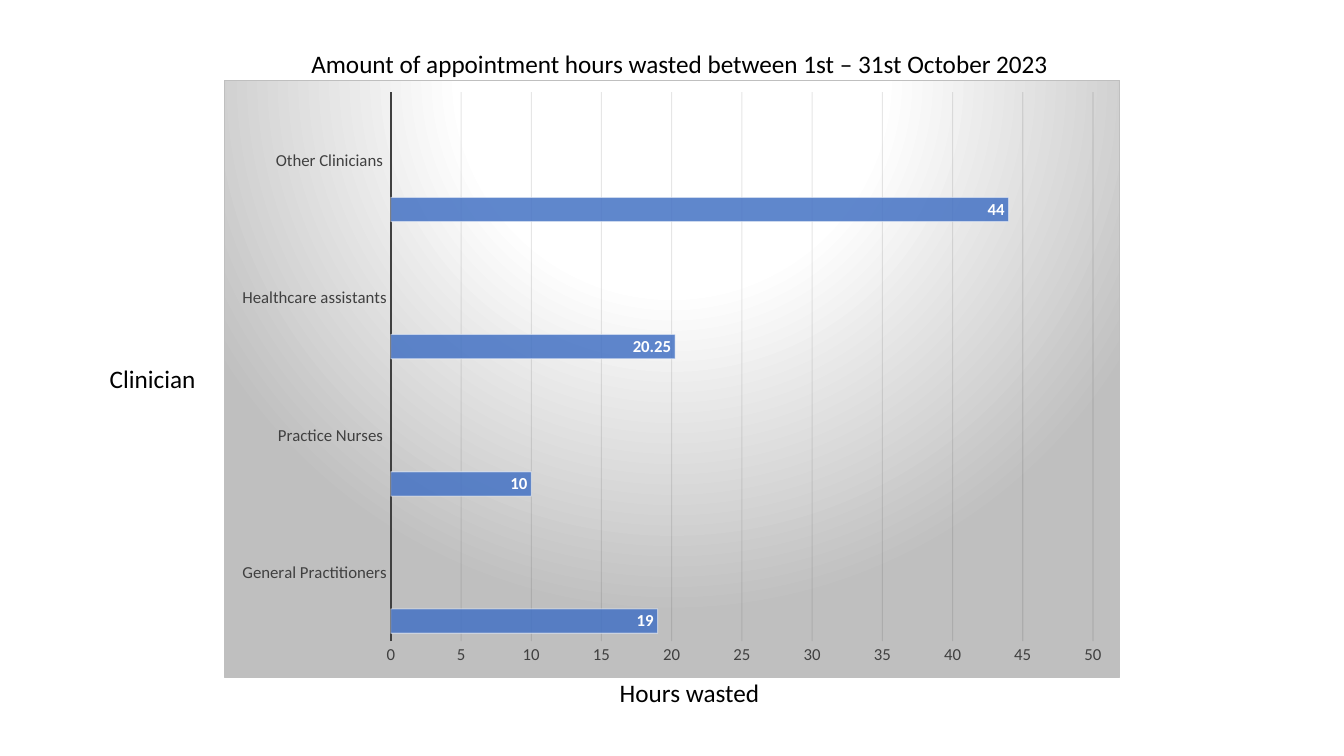
from dataclasses import dataclass

from lxml import etree
from pptx import Presentation
from pptx import util as u
from pptx.chart.chart import Chart
from pptx.chart.data import CategoryChartData
from pptx.dml import color
from pptx.dml.fill import FillFormat
from pptx.dml.line import LineFormat
from pptx.enum import chart as chart_enum
from pptx.enum import text
from pptx.oxml import parse_xml
from pptx.oxml.ns import nsdecls, qn
from pptx.slide import Slide

CELL = u.Inches(13.333) / 96  # the slide is a grid of 96 columns and 54 rows
FONT = "Calibri"
CATEGORIES = ["General Practitioners", "Practice Nurses ",
              "Healthcare assistants", "Other Clinicians "]
HOURS_WASTED = [19, 10, 20.25, 44]
SERIES_COLOURS = ["4472C4", "ED7D31", "A5A5A5", "FFC000", "5B9BD5"]


@dataclass
class Area:
    column: float
    row: float
    columns: float
    rows: float

    def box(self) -> list[u.Emu]:
        return [u.Emu(round(cells * CELL))
                for cells in (self.column, self.row, self.columns, self.rows)]


@dataclass
class Caption:
    wording: str
    area: Area


CHART_AREA = Area(16, 5.7, 64, 42.7)
CAPTIONS = [
    Caption("Amount of appointment hours wasted between 1st – 31st October 2023",
            Area(21.53, 3.1, 58.47, 7.27)),
    Caption("Hours wasted", Area(43.56, 48.02, 12.82, 2.9)),
    Caption("Clinician", Area(7.13, 25.56, 9.58, 2.9)),
]


def rgb(value: str) -> color.RGBColor:
    return color.RGBColor.from_string(value)


def style_font(font: text.MSO_ANCHOR, size: float, colour: str, bold: bool = False) -> None:
    font.name = FONT
    font.size = u.Pt(size)
    font.bold = bold
    font.color.rgb = rgb(colour)


def style_line(line: LineFormat, colour: str, width: float) -> None:
    line.width = u.Pt(width)
    paint(line.fill, colour)


def paint(fill: FillFormat, colour: str) -> None:
    fill.solid()
    fill.fore_color.rgb = rgb(colour)


def set_opacity(properties: etree.ElementBase, target: str, percent: int) -> None:
    """Set the opacity of the solid fill that lies at target in a spPr element."""
    for solid in properties.findall(target):
        alpha = etree.SubElement(solid[0], qn("a:alpha"))
        alpha.set("val", str(percent * 1000))


def add_background(chart: Chart) -> None:
    """Give the chart its round grey gradient and thin border."""
    stops = "".join(
        f'<a:gs pos="{position * 1000}"><a:srgbClr val="{colour}"/></a:gs>'
        for position, colour in [(0, "FFFFFF"), (39, "FFFFFF"), (100, "BFBFBF")])
    background = parse_xml(
        f'<c:spPr {nsdecls("c", "a")}><a:gradFill><a:gsLst>{stops}</a:gsLst>'
        '<a:path path="circle">'
        '<a:fillToRect l="50000" t="-80000" r="50000" b="180000"/></a:path></a:gradFill>'
        '<a:ln w="9525"><a:solidFill><a:srgbClr val="BFBFBF"/></a:solidFill></a:ln></c:spPr>')
    chart.element.find(qn("c:chart")).addnext(background)


def style_axes(chart: Chart) -> None:
    for axis in (chart.category_axis, chart.value_axis):
        axis.major_tick_mark = chart_enum.XL_TICK_MARK.NONE
        axis.minor_tick_mark = chart_enum.XL_TICK_MARK.NONE
        style_font(axis.tick_labels.font, 12, "404040")
    style_line(chart.category_axis.format.line, "404040", 1.5)
    hours = chart.value_axis
    hours.format.line.fill.background()
    hours.has_major_gridlines = True
    style_line(hours.major_gridlines.format.line, "0D0D0D", 0.75)
    gridlines = hours.element if hasattr(hours, "element") else chart.element
    line_fill = f'{qn("a:ln")}/{qn("a:solidFill")}'
    for properties in gridlines.iterfind(f'.//{qn("c:majorGridlines")}/{qn("c:spPr")}'):
        set_opacity(properties, line_fill, 10)


def style_series(chart: Chart) -> None:
    for series, colour in zip(chart.plots[0].series, SERIES_COLOURS):
        series.invert_if_negative = False
        paint(series.format.fill, colour)
        style_line(series.format.line, "FFFFFF", 0.75)
        properties = series.format.fill and series.element_properties \
            if hasattr(series, "element_properties") else chart.element.findall(
                f'.//{qn("c:ser")}/{qn("c:spPr")}')[series.index]
        set_opacity(properties, qn("a:solidFill"), 85)
        set_opacity(properties, f'{qn("a:ln")}/{qn("a:solidFill")}', 50)
        labels = series.data_labels
        labels.show_value = True
        labels.position = chart_enum.XL_LABEL_POSITION.INSIDE_END
        style_font(labels.font, 12, "FFFFFF", bold=True)


def add_hours_chart(slide: Slide) -> None:
    data = CategoryChartData()
    data.categories = CATEGORIES
    empty = [None] * len(CATEGORIES)
    for index in range(len(SERIES_COLOURS)):
        data.add_series(f"Series {index + 1}", empty if index else HOURS_WASTED)
    chart = slide.shapes.add_chart(
        chart_enum.XL_CHART_TYPE.BAR_CLUSTERED, *CHART_AREA.box(), data).chart
    chart.has_title = False
    chart.has_legend = False
    style_font(chart.font, 10, "000000")
    chart.plots[0].gap_width = 65
    chart.plots[0].vary_by_categories = False
    style_axes(chart)
    style_series(chart)
    add_background(chart)


def add_caption(slide: Slide, caption: Caption) -> None:
    frame = slide.shapes.add_textbox(*caption.area.box()).text_frame
    frame.word_wrap = True
    run = frame.paragraphs[0].add_run()
    run.text = caption.wording
    style_font(run.font, 18, "000000")


def main() -> None:
    presentation = Presentation()
    presentation.slide_width = u.Inches(13.333)
    presentation.slide_height = u.Inches(7.5)
    slide = presentation.slides.add_slide(presentation.slide_layouts[6])
    add_hours_chart(slide)
    for caption in CAPTIONS:
        add_caption(slide, caption)
    presentation.save("out.pptx")


if __name__ == "__main__":
    main()
